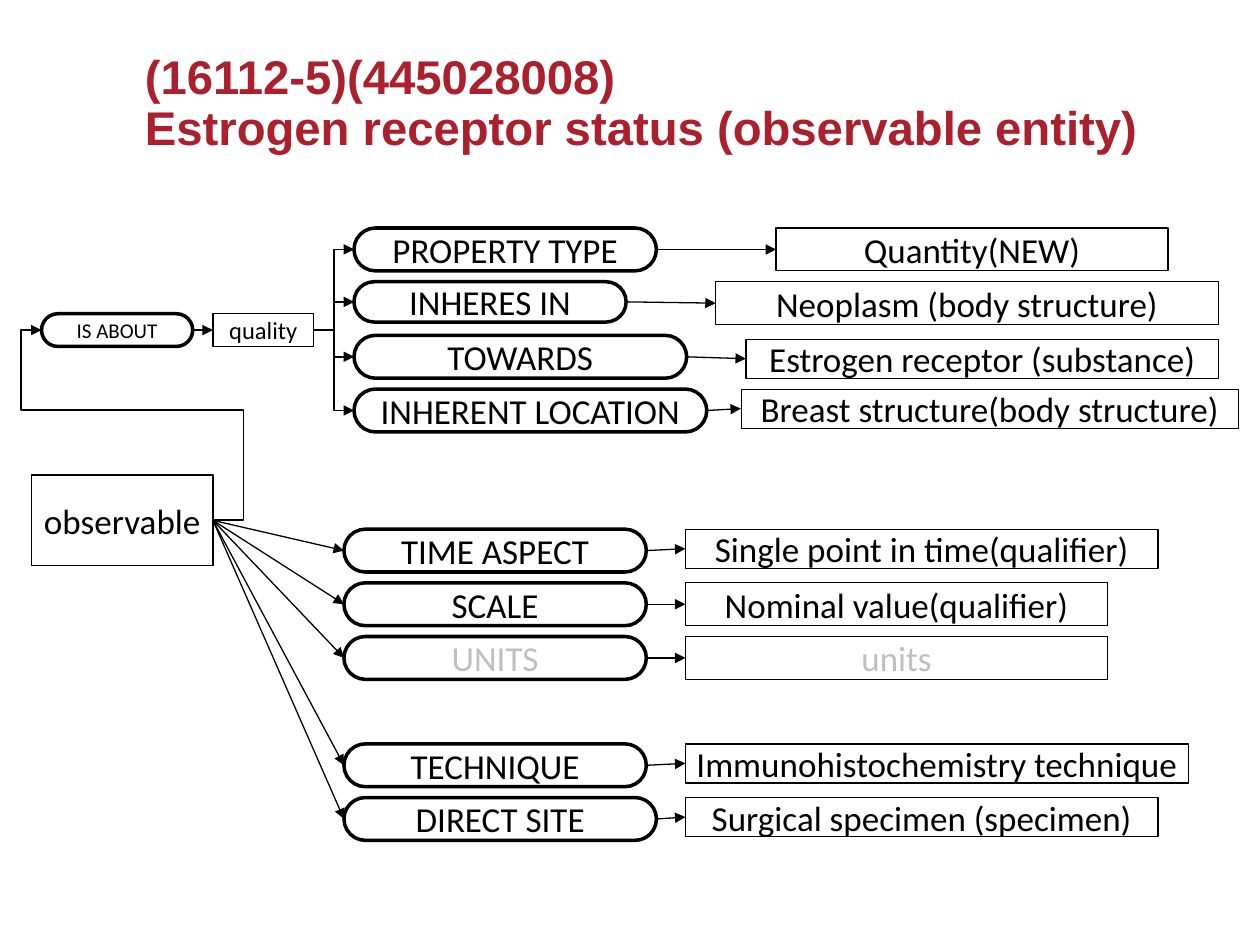
"""Build the observable entity model slide for estrogen receptor status."""
from copy import deepcopy
from lxml import etree
from pptx import Presentation
from pptx.dml.color import RGBColor
from pptx.enum import shapes, text
from pptx.oxml import ns
from pptx.util import Inches, Pt

HUES = {"ink": "000000", "dim": "BFBFBF", "title": "AC1F2D"}
TITLE = "(16112-5)(445028008)\vEstrogen receptor status (observable entity)"
PITCH, TALL = 0.426, 0.34

# slot, name, pill width, pill height, value, box left, box drop, box width, box height, hue, box line
QUALITY = [
    (0, "PROPERTY TYPE", 2.4, TALL, "Quantity(NEW)", 6.16, 0, 3.11, 0.34, "ink", 0.75),
    (1, "INHERES IN", 2.16, 0.32, "Neoplasm (body structure)", 5.68, 0, 3.99, 0.34, "ink", 0.75),
    (2, "TOWARDS", 2.64, TALL, "Estrogen receptor (substance)", 5.92, 0.03, 3.75, 0.31, "ink", 0.75),
    (3, "INHERENT LOCATION", 2.8, TALL, "Breast structure(body structure)", 5.88, 0, 3.95, 0.31, "ink", 0.25),
]
DIRECT = [
    (0, "TIME ASPECT", 2.4, TALL, "Single point in time(qualifier)", 5.44, 0, 3.75, 0.31, "ink", 0.75),
    (1, "SCALE", 2.4, TALL, "Nominal value(qualifier)", 5.44, 0, 3.35, 0.34, "ink", 0.75),
    (2, "UNITS", 2.4, TALL, "units", 5.44, 0, 3.35, 0.34, "dim", 0.75),
    (4, "TECHNIQUE", 2.4, TALL, "Immunohistochemistry technique", 5.44, 0, 3.99, 0.31, "ink", 0.75),
    (5, "DIRECT SITE", 2.48, TALL, "Surgical specimen (specimen)", 5.44, 0, 3.75, 0.31, "ink", 0.75),
]


def tint(key):
    return RGBColor.from_string(HUES[key])


def write(frame, words, size=20, face="Calibri", hue="ink", bold=False,
          align=text.PP_ALIGN.CENTER, anchor=text.MSO_ANCHOR.MIDDLE,
          pad=(0.1, 0.05, 0.1, 0.05), gap=None):
    frame.word_wrap = True
    frame.auto_size = text.MSO_AUTO_SIZE.NONE
    frame.vertical_anchor = anchor
    (frame.margin_left, frame.margin_top,
     frame.margin_right, frame.margin_bottom) = map(Inches, pad)
    para = frame.paragraphs[0]
    para.text, para.alignment, para.line_spacing = words, align, gap
    for run in para.runs:
        font = run.font
        font.size, font.name, font.bold = Pt(size), face, bold
        font.color.rgb = tint(hue)
    for rift in para._p.findall(ns.qn("a:br")):
        rift.insert(0, deepcopy(para.runs[0]._r.rPr))


def node(slide, words, left, top, wide, high, pill=False, line=0.75, **style):
    kind = shapes.MSO_SHAPE.ROUNDED_RECTANGLE if pill else shapes.MSO_SHAPE.RECTANGLE
    form = slide.shapes.add_shape(kind, *map(Inches, (left, top, wide, high)))
    form.shadow.inherit = False
    form.fill.background()
    form.line.color.rgb = tint("ink")
    form.line.width = Pt(2 if pill else line)
    if pill:
        form.adjustments[0] = 0.5
    else:
        style["pad"] = (0.07, 0.03, 0.07, 0.03)
    write(form.text_frame, words, **style)
    mid = top + high / 2
    return (left, mid), (left + wide, mid)


def arrow(slide, start, end, bent=False, bends=()):
    kind = shapes.MSO_CONNECTOR.ELBOW if bent else shapes.MSO_CONNECTOR.STRAIGHT
    link = slide.shapes.add_connector(kind, *map(Inches, start + end))
    link.line.color.rgb = tint("ink")
    link.line.width = Pt(1 if bent else 0.75)
    props = link._element.spPr
    etree.SubElement(link.line._get_or_add_ln(), ns.qn("a:tailEnd"), type="triangle")
    etree.SubElement(props, ns.qn("a:effectLst"))
    if bends:
        geom = props.find(ns.qn("a:prstGeom"))
        geom.set("prst", "bentConnector5")
        guides = geom.find(ns.qn("a:avLst"))
        for num, bend in enumerate(bends, 1):
            etree.SubElement(guides, ns.qn("a:gd"), name=f"adj{num}",
                             fmla=f"val {round(bend * 100000)}")


def fan(slide, source, rows, left, top, bent):
    for slot, name, wide, high, value, edge, drop, span, deep, hue, line in rows:
        row = top + slot * PITCH
        entry, leave = node(slide, name, left, row, wide, high, pill=True, hue=hue)
        goal = node(slide, value, edge, row + drop, span, deep, line=line, hue=hue)[0]
        arrow(slide, leave, goal)
        arrow(slide, source, entry, bent=bent)


def main():
    deck = Presentation()
    deck.slide_width, deck.slide_height = Inches(10), Inches(7.5)
    slide = deck.slides.add_slide(deck.slide_layouts[5])
    head = slide.shapes.title
    head.left, head.top, head.width, head.height = map(Inches, (1.05, 0.43, 8.32, 1.4))
    write(head.text_frame, TITLE, size=27, face="Arial", hue="title", bold=True,
          align=text.PP_ALIGN.LEFT, anchor=text.MSO_ANCHOR.BOTTOM,
          pad=(0.1, 0, 0.1, 0.59), gap=0.9)

    root = node(slide, "observable", 0.25, 3.77, 1.44, 0.72)[1]
    about, out = node(slide, "IS ABOUT", 0.33, 2.49, 1.2, 0.26, pill=True, size=12)
    entry, hub = node(slide, "quality", 1.69, 2.49, 0.8, 0.26, size=14)
    arrow(slide, root, about, bent=True, bends=(-0.18, 0.58, 1.12))
    arrow(slide, out, entry)
    fan(slide, hub, QUALITY, 2.81, 1.81, True)
    fan(slide, root, DIRECT, 2.73, 4.2, False)
    deck.save("out.pptx")


if __name__ == "__main__":
    main()
